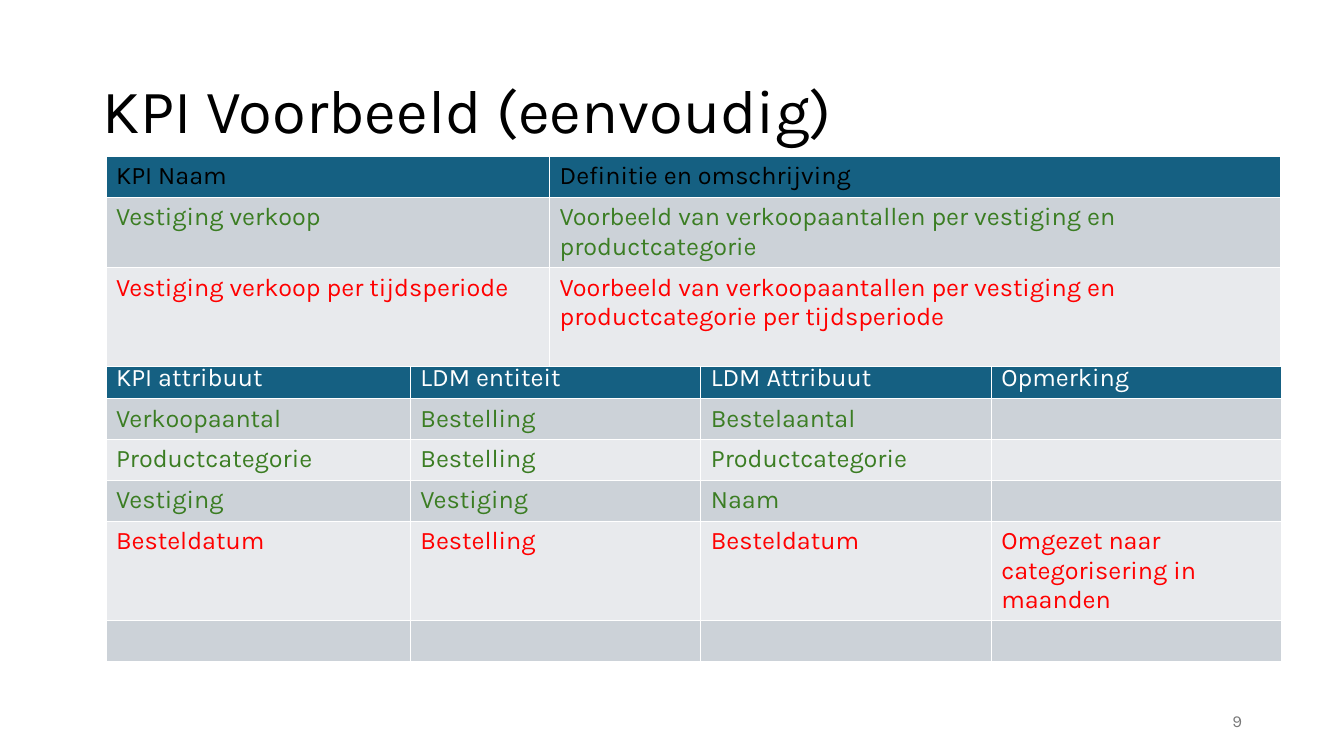
from pptx import Presentation
from pptx.dml.color import RGBColor
from pptx.enum.text import MSO_ANCHOR, MSO_AUTO_SIZE, PP_ALIGN
from pptx.util import Cm, Pt

BLACK = RGBColor(0x00, 0x00, 0x00)
WHITE = RGBColor(0xFF, 0xFF, 0xFF)
GREEN = RGBColor(0x3B, 0x7D, 0x23)
RED = RGBColor(0xFF, 0x00, 0x00)
GREY = RGBColor(0x79, 0x79, 0x79)
HEADER_BLUE = RGBColor(0x15, 0x60, 0x82)
DARK_BAND = RGBColor(0xCC, 0xD2, 0xD8)
LIGHT_BAND = RGBColor(0xE8, 0xEA, 0xED)

FONT = "Karla"
TABLE_LEFT = 2.67
LINE_ROW = 1.03
TWO_LINE_ROW = 1.75
THREE_LINE_ROW = 2.49

KPIS = [
    (BLACK, LINE_ROW, ["KPI Naam", "Definitie en omschrijving"]),
    (GREEN, TWO_LINE_ROW, [
        "Vestiging verkoop",
        "Voorbeeld van verkoopaantallen per vestiging en productcategorie",
    ]),
    (RED, THREE_LINE_ROW, [
        "Vestiging verkoop per tijdsperiode",
        "Voorbeeld van verkoopaantallen per vestiging en productcategorie per tijdsperiode",
    ]),
]
ATTRIBUTES = [
    (WHITE, LINE_ROW, ["KPI attribuut", "LDM entiteit", "LDM Attribuut", "Opmerking"]),
    (GREEN, LINE_ROW, ["Verkoopaantal", "Bestelling", "Bestelaantal", ""]),
    (GREEN, LINE_ROW, ["Productcategorie", "Bestelling", "Productcategorie", ""]),
    (GREEN, LINE_ROW, ["Vestiging", "Vestiging", "Naam", ""]),
    (RED, THREE_LINE_ROW, [
        "Besteldatum", "Bestelling", "Besteldatum",
        "Omgezet naar categorisering in maanden",
    ]),
    (GREEN, LINE_ROW, ["", "", "", ""]),
]


def write(frame, text, size=18, color=BLACK, align=PP_ALIGN.LEFT,
          anchor=MSO_ANCHOR.TOP, line_spacing=None):
    frame.word_wrap = True
    frame.vertical_anchor = anchor
    paragraph = frame.paragraphs[0]
    paragraph.alignment = align
    paragraph.line_spacing = line_spacing
    paragraph.font.size = Pt(size)
    if text:
        run = paragraph.add_run()
        run.text = text
        run.font.name = FONT
        run.font.size = Pt(size)
        run.font.bold = False
        run.font.color.rgb = color


def add_title(slide, text):
    title = slide.shapes.title
    title.left, title.top = Cm(2.34), Cm(1.02)
    title.width, title.height = Cm(29.21), Cm(3.68)
    title.text_frame.auto_size = MSO_AUTO_SIZE.NONE
    write(title.text_frame, text, size=44, anchor=MSO_ANCHOR.MIDDLE, line_spacing=0.9)


def add_banded_table(slide, top, widths, rows):
    height = sum(row_height for _, row_height, _ in rows)
    table = slide.shapes.add_table(
        len(rows), len(widths), Cm(TABLE_LEFT), Cm(top), Cm(sum(widths)), Cm(height)
    ).table
    for column, width in zip(table.columns, widths):
        column.width = Cm(width)
    for index, (color, row_height, texts) in enumerate(rows):
        table.rows[index].height = Cm(row_height)
        band = DARK_BAND if index % 2 else LIGHT_BAND
        for cell, text in zip(table.rows[index].cells, texts):
            cell.fill.solid()
            cell.fill.fore_color.rgb = band if index else HEADER_BLUE
            write(cell.text_frame, text, color=color)


def add_page_number(slide, number):
    box = slide.shapes.add_textbox(Cm(23.93), Cm(17.65), Cm(7.62), Cm(1.02))
    write(box.text_frame, number, size=12, color=GREY,
          align=PP_ALIGN.RIGHT, anchor=MSO_ANCHOR.MIDDLE)


def main():
    presentation = Presentation()
    presentation.slide_width, presentation.slide_height = Cm(33.87), Cm(19.05)
    slide = presentation.slides.add_slide(presentation.slide_layouts[5])
    add_title(slide, "KPI Voorbeeld (eenvoudig)")
    add_banded_table(slide, 9.02, [7.67, 7.32, 7.32, 7.32], ATTRIBUTES)
    add_page_number(slide, "9")
    add_banded_table(slide, 3.94, [11.18, 18.42], KPIS)
    presentation.save("out.pptx")


if __name__ == "__main__":
    main()
